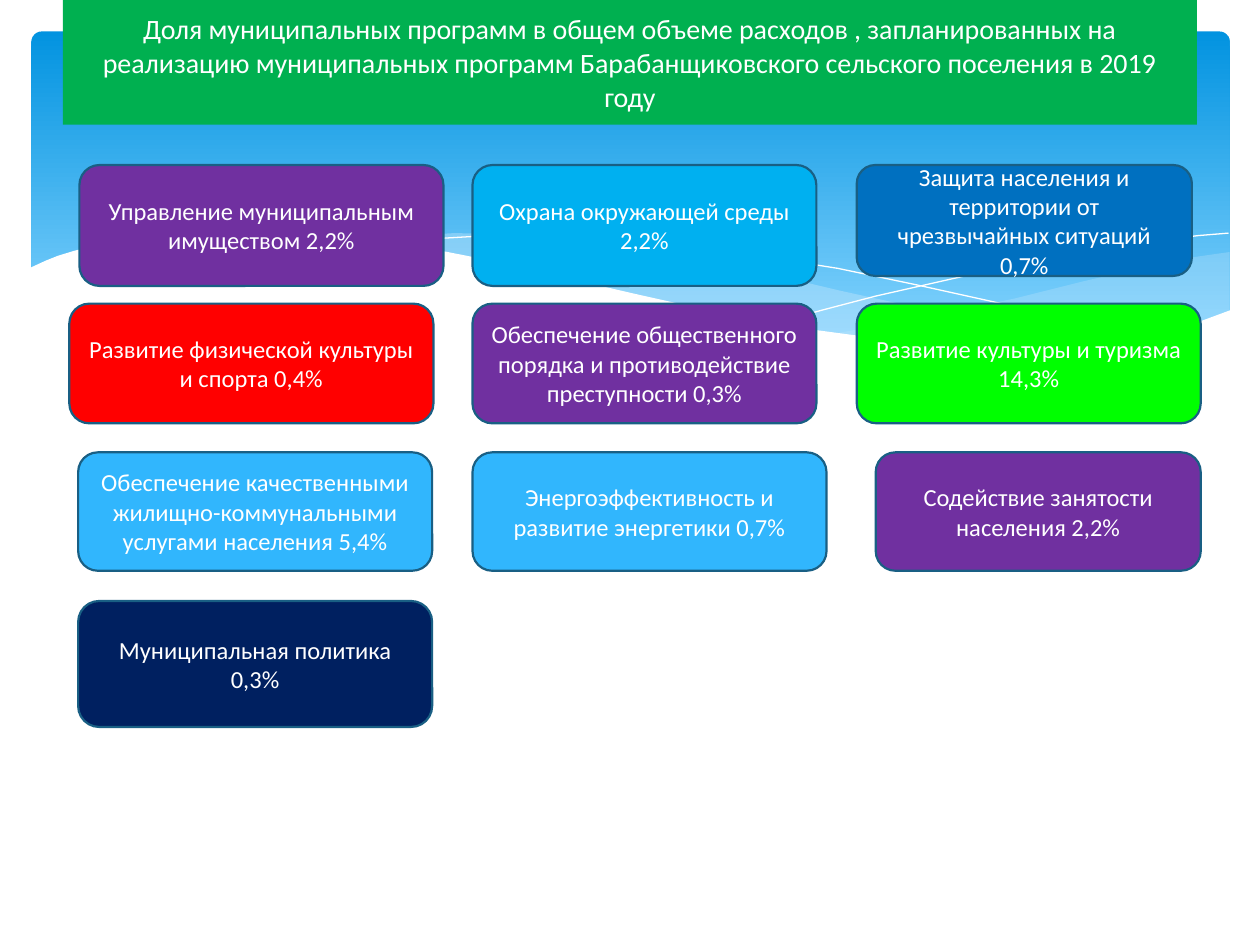
from lxml.etree import SubElement
from pptx import Presentation
from pptx.dml.color import RGBColor
from pptx.enum.shapes import MSO_SHAPE
from pptx.enum.text import MSO_ANCHOR, PP_ALIGN
from pptx.oxml.ns import qn
from pptx.util import Inches, Pt

COLORS = {
    "sky_top": "0293E0", "sky_bottom": "83D3FE", "wave": "C6E7FC",
    "white": "FFFFFF", "border": "195F84", "title": "00B050",
    "purple": "7030A0", "red": "FF0000", "azure": "31B6FD",
    "lime": "00FF00", "cyan": "00B0F0", "blue": "0070C0", "navy": "002060",
}

TITLE = ("Доля муниципальных программ в общем объеме расходов , запланированных на "
         "реализацию муниципальных программ Барабанщиковского сельского поселения в 2019 году")

# Top and height of each row of cards, then left, width, colour and text of each card
CARD_ROWS = [
    (131, 96, [
        (63, 289, "purple", "Управление муниципальным имуществом 2,2%"),
        (375, 273, "cyan", "Охрана окружающей среды 2,2%"),
    ]),
    (131, 88, [
        (680, 266, "blue", "Защита населения и территории от чрезвычайных ситуаций 0,7%"),
    ]),
    (241, 95, [
        (55, 289, "red", "Развитие физической культуры и спорта 0,4%"),
        (375, 273, "purple", "Обеспечение общественного порядка и противодействие преступности 0,3%"),
        (680, 273, "lime", "Развитие культуры и туризма 14,3%"),
    ]),
    (359, 94, [
        (62, 281, "azure", "Обеспечение качественными жилищно-коммунальными услугами населения 5,4%"),
        (375, 281, "azure", "Энергоэффективность и развитие энергетики 0,7%"),
        (695, 258, "purple", "Содействие занятости населения 2,2%"),
    ]),
    (477, 100, [
        (62, 281, "navy", "Муниципальная политика 0,3%"),
    ]),
]

# Outlines of the wave, as (column, row) points
RIGHT_WAVE = [
    (976, 200), (948, 204), (921, 210), (891, 216), (861, 223), (805, 237),
    (753, 248), (706, 257), (661, 265), (691, 269), (732, 274), (769, 277),
    (803, 278), (835, 277), (863, 275), (889, 272), (913, 267), (935, 262),
    (949, 257), (976, 247),
]
MIDDLE_WAVE = [
    (893, 273), (866, 269), (807, 260), (741, 247), (668, 231), (613, 218),
    (569, 208), (528, 200), (489, 194), (442, 189), (399, 186), (361, 185),
    (328, 187), (299, 189), (286, 191), (323, 196), (362, 203), (404, 211),
    (449, 222), (530, 240), (601, 255), (650, 264), (695, 270), (736, 275),
    (773, 277), (807, 278), (838, 278), (867, 276), (893, 273),
]
FALLING_LINE = [
    (309, 195), (328, 192), (353, 189), (387, 187), (433, 187), (469, 189),
    (510, 192), (556, 197), (608, 204), (665, 213), (727, 226), (795, 241),
    (869, 261), (907, 272),
]
RISING_LINE = [
    (613, 257), (653, 246), (695, 235), (748, 223), (806, 210), (866, 199),
    (910, 192), (951, 187), (975, 185),
]
WHITE_WAVE = [
    (977, 246), (950, 256), (920, 265), (887, 271), (850, 275), (809, 277),
    (761, 275), (708, 270), (648, 262), (579, 250), (503, 233), (447, 220),
    (391, 207), (340, 197), (292, 190), (250, 186), (211, 184), (177, 184),
    (146, 185), (119, 187), (95, 191), (76, 195), (59, 199), (46, 203),
    (36, 207), (23, 213), (23, 329), (977, 329),
]


class SlideBuilder:
    """Draws on a grid of 1000 columns by 750 rows."""

    text_frame_format = {"word_wrap": True, "vertical_anchor": MSO_ANCHOR.MIDDLE}
    font_format = {"name": "Calibri"}

    def __init__(self, presentation):
        self.unit = presentation.slide_width // 1000
        self.slide = presentation.slides.add_slide(presentation.slide_layouts[6])

    def color(self, name):
        return RGBColor.from_string(COLORS[name])

    def apply(self, target, values):
        for name, value in values.items():
            setattr(target, name, value)

    def paint(self, shape, fill=None, opacity=100, line=None, line_width=0):
        shape.shadow.inherit = False
        if fill:
            shape.fill.solid()
            shape.fill.fore_color.rgb = self.color(fill)
            if opacity < 100:
                fill_color = shape.fill._xPr.find(qn("a:solidFill"))[0]
                SubElement(fill_color, qn("a:alpha"), val=str(opacity * 1000))
        else:
            shape.fill.background()
        if line:
            shape.line.color.rgb = self.color(line)
            shape.line.width = Pt(line_width)
        else:
            shape.line.fill.background()

    def box(self, kind, left, top, width, height, **paint):
        edges = [length * self.unit for length in (left, top, width, height)]
        shape = self.slide.shapes.add_shape(kind, *edges)
        self.paint(shape, **paint)
        return shape

    def text_box(self, kind, place, text, size, **paint):
        shape = self.box(kind, *place, **paint)
        self.apply(shape.text_frame, self.text_frame_format)
        paragraph = shape.text_frame.paragraphs[0]
        paragraph.text = text
        paragraph.alignment = PP_ALIGN.CENTER
        self.apply(paragraph.font, {**self.font_format, "size": Pt(size)})
        paragraph.font.color.rgb = self.color("white")

    def sky(self, left, top, width, height):
        shape = self.box(MSO_SHAPE.ROUNDED_RECTANGLE, left, top, width, height)
        shape.adjustments[0] = 0.03
        shape.fill.gradient()
        shape.fill.gradient_angle = 270
        stops = [(0, "sky_top"), (0.9, "sky_bottom")]
        for stop, (position, name) in zip(shape.fill.gradient_stops, stops):
            stop.position = position
            stop.color.rgb = self.color(name)

    def outline(self, points, closed=True, **paint):
        builder = self.slide.shapes.build_freeform(*points[0], scale=self.unit)
        builder.add_line_segments(points[1:], close=closed)
        self.paint(builder.convert_to_shape(), **paint)


def main():
    presentation = Presentation()
    presentation.slide_width, presentation.slide_height = Inches(10), Inches(7.5)
    builder = SlideBuilder(presentation)

    # Sky and waves
    builder.sky(25, 25, 951, 270)
    builder.outline(RIGHT_WAVE, fill="wave", opacity=29)
    builder.outline(MIDDLE_WAVE, fill="wave", opacity=40)
    for points in (FALLING_LINE, RISING_LINE):
        builder.outline(points, closed=False, line="white")
    builder.outline(WHITE_WAVE, fill="white")

    # Title
    builder.text_box(MSO_SHAPE.RECTANGLE, (50, 0, 900, 99), TITLE, 16, fill="title")

    # Programme cards
    for top, height, cards in CARD_ROWS:
        for left, width, fill, text in cards:
            builder.text_box(MSO_SHAPE.ROUNDED_RECTANGLE, (left, top, width, height),
                             text, 14, fill=fill, line="border", line_width=1.25)

    presentation.save("out.pptx")


if __name__ == "__main__":
    main()
